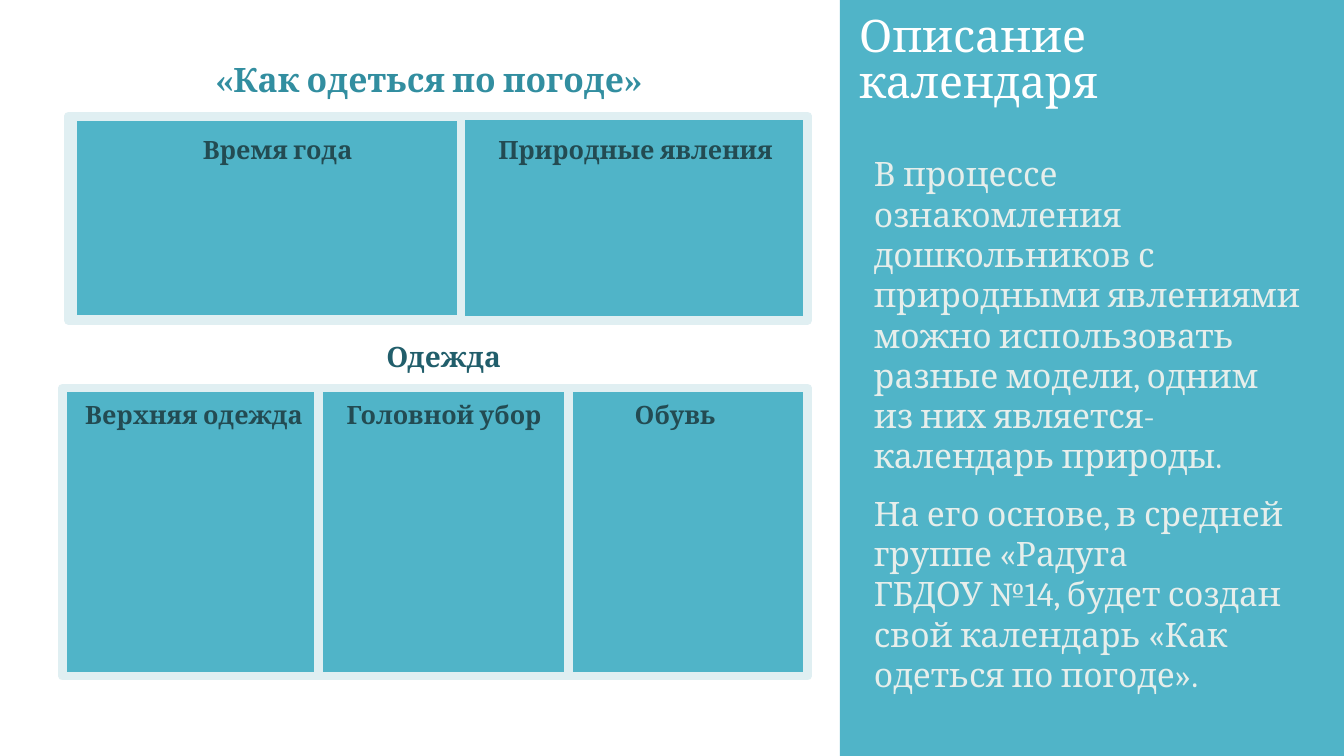
from dataclasses import dataclass
from pptx import Presentation
from pptx.dml.color import RGBColor
from pptx.enum.shapes import MSO_SHAPE
from pptx.enum.text import MSO_ANCHOR as ANCHOR, MSO_AUTO_SIZE as FIT, PP_ALIGN as ALIGN
from pptx.util import Inches, Pt


@dataclass(frozen=True)
class Theme:
    """Colours, font and type sizes of the slide."""
    font: str = "Cambria"
    fill: str = "50B4C8"
    border: str = "E0EFF2"
    title: str = "FFFFFF"
    body: str = "E6EEEB"
    heading: str = "328EA0"
    subheading: str = "215E6B"
    caption: str = "234B52"
    title_size: int = 32
    body_size: int = 24
    subheading_size: int = 20
    caption_size: int = 18
    border_width: int = 6


T = Theme()


def place(sp, box):
    """Move a shape to a box given in inches."""
    for name, value in zip(("left", "top", "width", "height"), box):
        setattr(sp, name, Inches(value))


def write(tf, paragraphs, size, color, bold=False, frame=None, **para):
    """Fill a text frame with paragraphs in one format."""
    frame_format = {"word_wrap": True, "auto_size": FIT.NONE,
                    "vertical_anchor": ANCHOR.TOP, **(frame or {})}
    for name, value in frame_format.items():
        setattr(tf, name, value)
    for i, text in enumerate(paragraphs):
        p = tf.add_paragraph() if i else tf.paragraphs[0]
        p.text = text
        para_format = {"alignment": ALIGN.LEFT, "space_before": Pt(12 if i else 0), **para}
        for name, value in para_format.items():
            setattr(p, name, value)
        for r in p.runs:
            for name, value in {"name": T.font, "size": Pt(size), "bold": bold}.items():
                setattr(r.font, name, value)
            r.font.color.rgb = RGBColor.from_string(color)


def add_text(shapes, box, paragraphs, size, color, **fmt):
    """Add a text box with the given paragraphs."""
    sp = shapes.add_textbox(*map(Inches, box))
    write(sp.text_frame, paragraphs, size, color, **fmt)


def add_block(shapes, box, border=None):
    """Add a filled rectangle, with a border if a colour is given."""
    sp = shapes.add_shape(MSO_SHAPE.RECTANGLE, *map(Inches, box))
    sp.shadow.inherit = False
    sp.fill.solid()
    sp.fill.fore_color.rgb = RGBColor.from_string(T.fill)
    if border:
        sp.line.color.rgb = RGBColor.from_string(border)
        sp.line.width = Pt(T.border_width)
    else:
        sp.line.fill.background()
    return sp


def add_board(slide, box, cells, captions, caption_top, caption_height):
    """Group a framed board with its cells and their captions."""
    x, y, w, h = box
    shapes = slide.shapes.add_group_shape().shapes
    add_block(shapes, box, T.border)
    for dx, dy, width, height in cells:
        add_block(shapes, (x + dx, y + dy, width, height), T.border)
    for text, dx, width in captions:
        add_text(shapes, (x + dx, y + caption_top, width, caption_height), [text],
                 T.caption_size, T.caption, bold=True, frame={"word_wrap": False},
                 alignment=ALIGN.CENTER, line_spacing=1.07)


def add_sidebar(slide, box):
    """Fill the right panel with the title and the description."""
    x, y, w, h = box
    title = slide.shapes.title
    title.element.addprevious(add_block(slide.shapes, box).element)
    place(title, (x + 0.09, y + 0.22, 4.75, 0.9))
    write(title.text_frame, ["Описание календаря"], T.title_size, T.title,
          frame={"vertical_anchor": ANCHOR.BOTTOM}, line_spacing=0.85)
    add_text(slide.shapes, (x + 0.24, y + 1.47, 4.44, 5.49), [
        "В процессе ознакомления дошкольников с природными явлениями можно использовать "
        "разные модели, одним из них является- календарь природы.",
        "На его основе, в средней группе «Радуга\vГБДОУ №14, будет создан свой календарь "
        "«Как одеться по погоде»."], T.body_size, T.body)


def add_calendar(slide, box):
    """Place the calendar headings and both boards."""
    x, y, w, h = box
    add_text(slide.shapes, (x - 0.97, y + 2.77, 9.5, 0.44), ["Одежда"],
             T.subheading_size, T.subheading, bold=True,
             frame={"vertical_anchor": ANCHOR.MIDDLE}, alignment=ALIGN.CENTER)
    add_text(slide.shapes, (x + 1.42, y, 4.62, 0.5), ["«Как одеться по погоде»"],
             T.body_size, T.heading, bold=True)
    board_x = x + 0.06
    add_board(slide, (board_x, y + 3.31, 7.33, 2.86),
              [(-0.06, 0, 2.54, 2.86), (2.48, 0, 2.48, 2.86)],
              [("Верхняя одежда", 0.04, 2.41), ("Головной убор", 2.61, 2.23),
               ("Обувь", 5.51, 1.01)], 0.04, 0.4)
    add_board(slide, (board_x, y + 0.61, 7.33, 2.03), [(0.04, 0.01, 3.85, 2.01)],
              [("Время года", 1.21, 1.73), ("Природные явления", 4.11, 3.03)], 0.11, 0.43)


def main():
    """Build and save the slide."""
    prs = Presentation()
    prs.slide_width, prs.slide_height = Inches(13.33), Inches(7.5)
    slide = prs.slides.add_slide(prs.slide_layouts.get_by_name("Title Only"))
    add_sidebar(slide, (8.33, 0, 5, 7.5))
    add_calendar(slide, (0.62, 0.54, 7.39, 6.17))
    prs.save("out.pptx")


if __name__ == "__main__":
    main()
